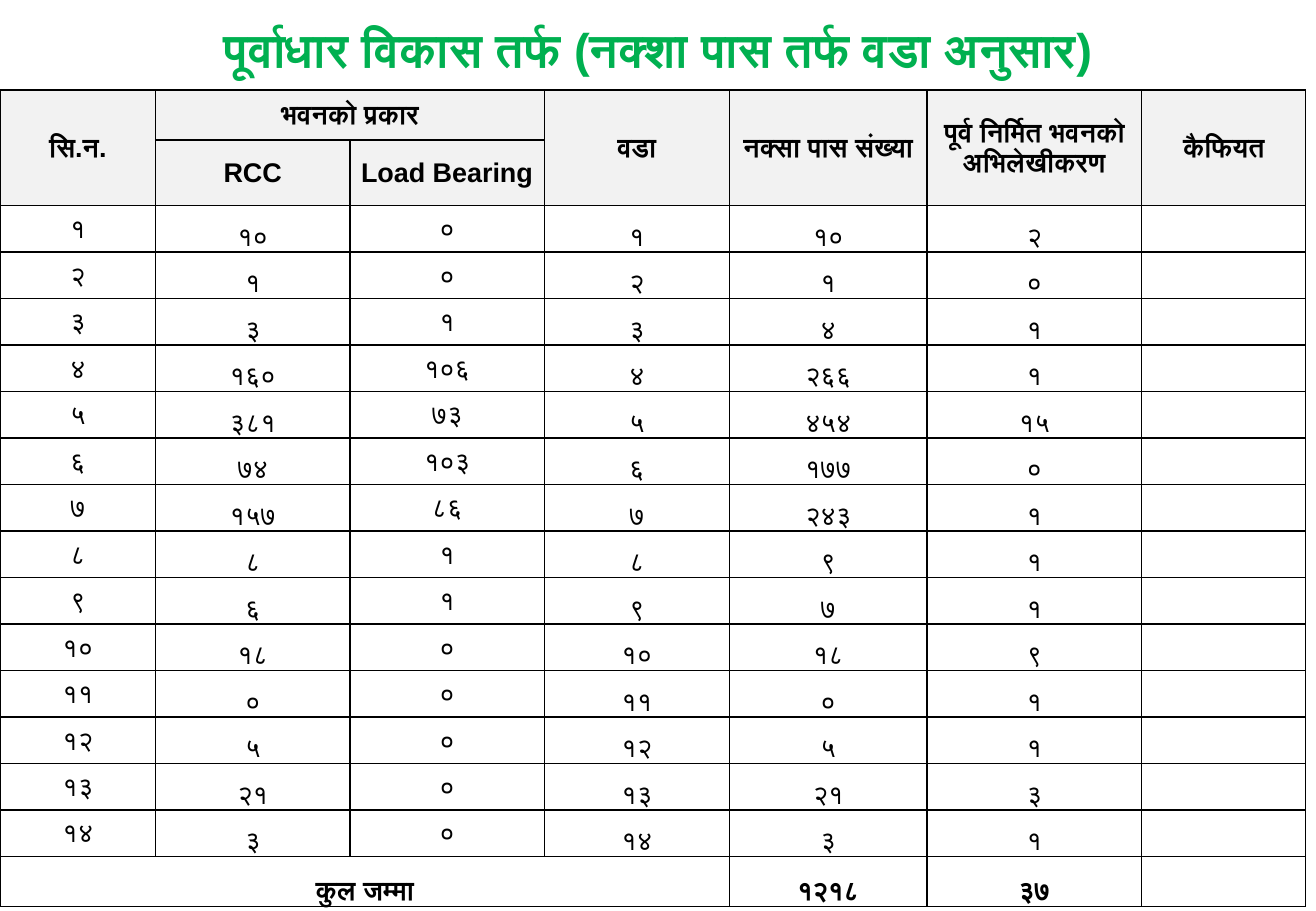
from dataclasses import dataclass

from lxml import etree
from pptx import Presentation
from pptx.dml.color import RGBColor
from pptx.enum import text
from pptx.oxml import ns
from pptx.util import Pt


@dataclass(frozen=True)
class Theme:
    font: str = "Arial"
    title: RGBColor = RGBColor(0x00, 0xB0, 0x50)
    ink: RGBColor = RGBColor(0x00, 0x00, 0x00)
    paper: RGBColor = RGBColor(0xFF, 0xFF, 0xFF)
    header: RGBColor = RGBColor(0xF2, 0xF2, 0xF2)
    title_size: Pt = Pt(28)
    cell_size: Pt = Pt(16)
    border: Pt = Pt(1)


THEME = Theme()


def write(tf, words, size, color, bold):
    """Fill a text frame with one centred line, with the font set for Devanagari too."""
    tf.text = words
    p = tf.paragraphs[0]
    p.alignment = text.PP_ALIGN.CENTER
    for r in p.runs:
        r.font.name = THEME.font
        r.font.size = size
        r.font.bold = bold
        r.font.color.rgb = color
        cs = etree.SubElement(r.font._element, ns.qn("a:cs"))
        cs.set("typeface", THEME.font)


def add_borders(cell):
    tcPr = cell._tc.get_or_add_tcPr()
    for i, side in enumerate(("lnL", "lnR", "lnT", "lnB")):
        ln = etree.Element(ns.qn(f"a:{side}"), w=str(THEME.border))
        fill = etree.SubElement(ln, ns.qn("a:solidFill"))
        etree.SubElement(fill, ns.qn("a:srgbClr"), val=str(THEME.ink))
        tcPr.insert(i, ln)


HEADER = [
    ["सि.न.", "भवनको प्रकार", "", "वडा", "नक्सा पास संख्या",
     "पूर्व निर्मित भवनको अभिलेखीकरण", "कैफियत"],
    ["", "RCC", "Load Bearing", "", "", "", ""],
]
# Ward, RCC, load bearing, permits passed, existing buildings recorded
WARDS = [
    ("१", "१०", "०", "१०", "२"),
    ("२", "१", "०", "१", "०"),
    ("३", "३", "१", "४", "१"),
    ("४", "१६०", "१०६", "२६६", "१"),
    ("५", "३८१", "७३", "४५४", "१५"),
    ("६", "७४", "१०३", "१७७", "०"),
    ("७", "१५७", "८६", "२४३", "१"),
    ("८", "८", "१", "९", "१"),
    ("९", "६", "१", "७", "१"),
    ("१०", "१८", "०", "१८", "९"),
    ("११", "०", "०", "०", "१"),
    ("१२", "५", "०", "५", "१"),
    ("१३", "२१", "०", "२१", "३"),
    ("१४", "३", "०", "३", "१"),
]
TOTAL = ["कुल जम्मा", "", "", "", "१२१८", "३७", ""]
rows = HEADER + [[n, rcc, load, n, passed, old, ""] for n, rcc, load, passed, old in WARDS] + [TOTAL]
last = len(rows) - 1
col_widths = [92.2, 115.2, 115.2, 109.8, 117, 127.4, 97.2]
row_heights = [29.6, 39] + [27.56] * len(WARDS) + [29.6]
MIDDLE_COLUMNS = (0, 2)

prs = Presentation()
prs.slide_width, prs.slide_height = Pt(780), Pt(540)
s = prs.slides.add_slide(prs.slide_layouts[5])

title = s.shapes.title
title.left, title.top, title.width, title.height = Pt(0), Pt(8.6), Pt(780), Pt(41)
title.fill.solid()
title.fill.fore_color.rgb = THEME.paper
tf = title.text_frame
write(tf, "पूर्वाधार विकास तर्फ (नक्शा पास तर्फ वडा अनुसार)", THEME.title_size, THEME.title, True)
tf.word_wrap = True
tf.auto_size = text.MSO_AUTO_SIZE.NONE
tf.vertical_anchor = text.MSO_ANCHOR.TOP

table = s.shapes.add_table(len(rows), len(col_widths), Pt(0), Pt(53.3),
                           Pt(sum(col_widths)), Pt(sum(row_heights))).table
table.first_row = table.horz_banding = False
for column, width in zip(table.columns, col_widths):
    column.width = Pt(width)
for row, height in zip(table.rows, row_heights):
    row.height = Pt(height)

for i, values in enumerate(rows):
    is_header = i < len(HEADER)
    for j, value in enumerate(values):
        cell = table.cell(i, j)
        cell.margin_left = cell.margin_right = cell.margin_top = Pt(0.7)
        cell.margin_bottom = Pt(0)
        in_middle = is_header or (i < last and j in MIDDLE_COLUMNS)
        cell.vertical_anchor = text.MSO_ANCHOR.MIDDLE if in_middle else text.MSO_ANCHOR.BOTTOM
        if is_header:
            cell.fill.solid()
            cell.fill.fore_color.rgb = THEME.header
        else:
            cell.fill.background()
        add_borders(cell)
        if value:
            write(cell.text_frame, value, THEME.cell_size, THEME.ink, is_header or i == last)

for j in (0, 3, 4, 5, 6):
    table.cell(0, j).merge(table.cell(1, j))
table.cell(0, 1).merge(table.cell(0, 2))
table.cell(last, 0).merge(table.cell(last, 3))

prs.save("out.pptx")
